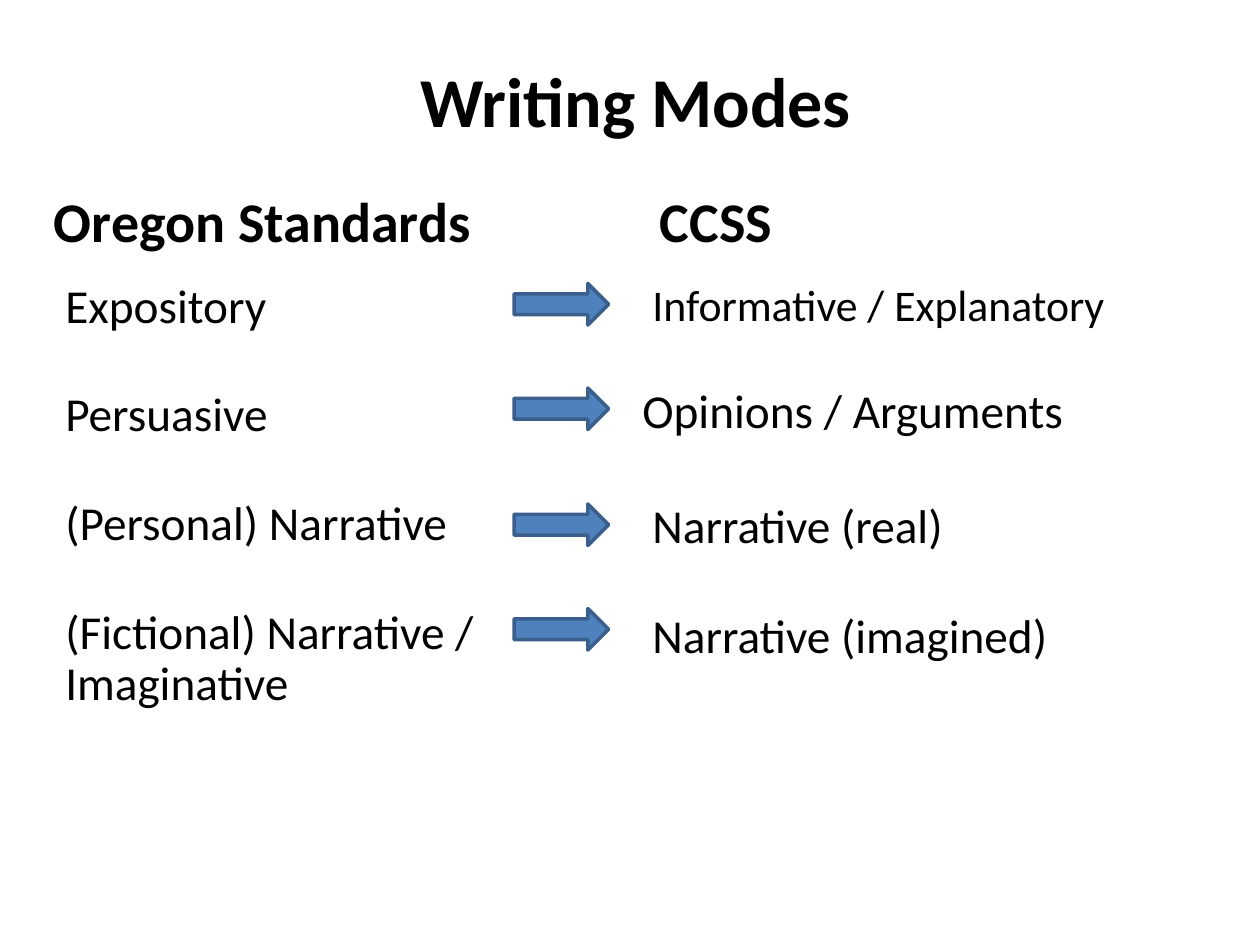
from lxml import etree
from pptx import Presentation
from pptx.dml.color import RGBColor
from pptx.enum.shapes import MSO_SHAPE
from pptx.enum.text import MSO_ANCHOR, PP_ALIGN
from pptx.oxml.ns import qn
from pptx.util import Inches, Pt

RIGHT_ARROW = MSO_SHAPE.RIGHT_ARROW
TOP, MIDDLE = MSO_ANCHOR.TOP, MSO_ANCHOR.MIDDLE
LEFT, CENTER = PP_ALIGN.LEFT, PP_ALIGN.CENTER

BLACK = RGBColor(0x00, 0x00, 0x00)
BLUE = RGBColor(0x4F, 0x81, 0xBD)
DARK_BLUE = RGBColor(0x3A, 0x5F, 0x8C)

FONT = "Calibri"
BODY_SIZE = 27
CCSS_TAB = 4.81

# text, space before in points
OREGON_MODES = [
    ("Expository", 0),
    ("Persuasive", 33),
    ("(Personal) Narrative", 33),
    ("(Fictional) Narrative /", 33),
    ("Imaginative", 0),
]
# text, left, top, width, height, size
CCSS_MODES = [
    ("Informative / Explanatory", 5.08, 2.08, 4.08, 0.67, 25),
    ("Opinions / Arguments", 5, 2.92, 3.92, 0.67, BODY_SIZE),
    ("Narrative (real)", 5.08, 3.83, 3.33, 0.67, BODY_SIZE),
    ("Narrative (imagined)", 5.08, 4.75, 4, 0.58, BODY_SIZE),
]
ARROW_TOPS = [2.25, 3.08, 4, 4.83]


def add_text_frame(slide, left, top, width, height, anchor=MIDDLE):
    box = slide.shapes.add_textbox(
        Inches(left), Inches(top), Inches(width), Inches(height))
    tf = box.text_frame
    tf.word_wrap = True
    tf.vertical_anchor = anchor
    return tf


def write(p, text, size, bold=False, **paragraph_format):
    for name, value in paragraph_format.items():
        setattr(p, name, value)
    r = p.add_run()
    r.text = text
    font_format = {"name": FONT, "size": Pt(size), "bold": bold}
    for name, value in font_format.items():
        setattr(r.font, name, value)
    r.font.color.rgb = BLACK


def add_tab_stop(p, position):
    tabs = etree.SubElement(p._p.get_or_add_pPr(), qn("a:tabLst"))
    etree.SubElement(tabs, qn("a:tab"), pos=str(Inches(position)), algn="l")


def add_title(slide):
    tf = add_text_frame(slide, 0.42, 0.25, 9.25, 1.08)
    write(tf.paragraphs[0], "Writing Modes", 40, True, alignment=CENTER)


def add_column_headings(slide):
    p = add_text_frame(slide, 0.33, 1.33, 9.5, 0.83).paragraphs[0]
    write(p, "Oregon Standards\tCCSS", 32, True, alignment=LEFT)
    add_tab_stop(p, CCSS_TAB)


def add_oregon_modes(slide):
    tf = add_text_frame(slide, 0.42, 1.58, 3.83, 4.33, TOP)
    tf.margin_top = Inches(0.66)
    for i, (text, gap) in enumerate(OREGON_MODES):
        p = tf.add_paragraph() if i else tf.paragraphs[0]
        write(p, text, BODY_SIZE, alignment=LEFT, line_spacing=0.9,
              space_before=Pt(gap))


def add_ccss_mode(slide, text, left, top, width, height, size):
    tf = add_text_frame(slide, left, top, width, height)
    write(tf.paragraphs[0], text, size, alignment=LEFT)


def add_arrow(slide, top):
    sp = slide.shapes.add_shape(
        RIGHT_ARROW, Inches(4.08), Inches(top), Inches(0.75), Inches(0.33))
    sp.shadow.inherit = False
    sp.fill.solid()
    sp.fill.fore_color.rgb = BLUE
    sp.line.color.rgb = DARK_BLUE
    sp.line.width = Pt(2)


def main():
    prs = Presentation()
    prs.slide_width, prs.slide_height = Inches(10), Inches(7.5)
    slide = prs.slides.add_slide(prs.slide_layouts[6])
    add_oregon_modes(slide)
    add_title(slide)
    for mode in CCSS_MODES:
        add_ccss_mode(slide, *mode)
    add_column_headings(slide)
    for top in ARROW_TOPS:
        add_arrow(slide, top)
    prs.save("out.pptx")


if __name__ == "__main__":
    main()
